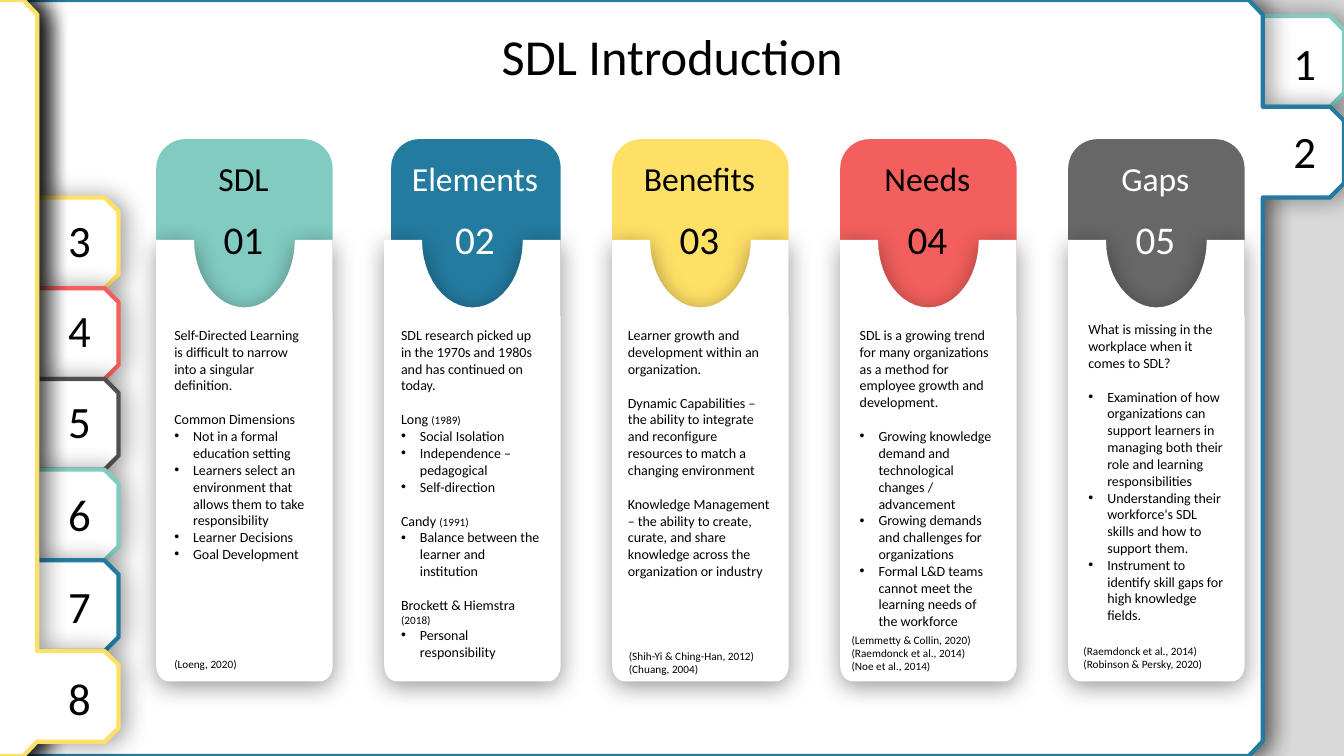
import math
from dataclasses import dataclass

import pptx
import pptx.dml.color
import pptx.enum.shapes
import pptx.enum.text
import pptx.oxml.ns
import pptx.shapes.base
import pptx.shapes.shapetree
import pptx.text.text
import pptx.util
from lxml import etree

Pt = pptx.util.Pt
RGBColor = pptx.dml.color.RGBColor
Shapes = pptx.shapes.shapetree.SlideShapes
qn = pptx.oxml.ns.qn

BLACK = RGBColor(0x00, 0x00, 0x00)
WHITE = RGBColor(0xFF, 0xFF, 0xFF)
BACKDROP = RGBColor(0xD9, 0xD9, 0xD9)
TEAL = RGBColor(0x81, 0xCB, 0xC1)
BLUE = RGBColor(0x24, 0x7B, 0xA0)
YELLOW = RGBColor(0xFF, 0xE0, 0x66)
RED = RGBColor(0xF2, 0x5F, 0x5C)
CHARCOAL = RGBColor(0x50, 0x51, 0x4F)
GREY = RGBColor(0x67, 0x67, 0x67)

FONT = "Calibri"
LEFT_SHIFT = -875.3
TAB_TOP, TAB_PITCH = 11.5, 64.8
COLUMN_LEFT, COLUMN_PITCH, COLUMN_WIDTH = 111.6, 162.85, 126
CARD_TOP, CARD_BOTTOM = 171.4, 486.7
BULLET_INDENT = 13.5
BLANK_LINE = 12.2

Point = tuple[float, float]


@dataclass(frozen=True)
class Box:
    left: float
    top: float
    width: float
    height: float


@dataclass(frozen=True)
class Tab:
    color: RGBColor
    label_top: float
    shift: float = LEFT_SHIFT


@dataclass(frozen=True)
class Line:
    text: str
    year: str = ""
    bullet: bool = False
    gap: bool = False
    size: float = 10


@dataclass(frozen=True)
class Column:
    title: str
    color: RGBColor
    text_color: RGBColor
    title_width: float
    body_box: Box
    body: list[Line]
    citation_box: Box | None = None
    citations: tuple[str, ...] = ()
    header_inset: float = 0


TABS = [
    Tab(TEAL, 21.6, 0), Tab(BLUE, 85, 0), Tab(YELLOW, 148.3), Tab(RED, 212.4),
    Tab(CHARCOAL, 277.9), Tab(TEAL, 344.2), Tab(BLUE, 409.7), Tab(YELLOW, 475.2),
]

COLUMNS = [
    Column("SDL", TEAL, BLACK, 121, Box(117.4, 229.7, 110.9, 177.1), [
        Line("Self-Directed Learning is difficult to narrow into a singular definition."),
        Line("Common Dimensions", gap=True),
        Line("Not in a formal education setting", bullet=True),
        Line("Learners select an environment that allows them to take responsibility", bullet=True),
        Line("Learner Decisions", bullet=True),
        Line("Goal Development", bullet=True),
    ], Box(117.4, 465.8, 110.9, 17.3), ("(Loeng, 2020)",)),
    Column("Elements", BLUE, WHITE, 109.4, Box(279.4, 229.7, 115.2, 234.7), [
        Line("SDL research picked up in the 1970s and 1980s and has continued on today."),
        Line("Long ", "(1989)", gap=True),
        Line("Social Isolation", bullet=True),
        Line("Independence – pedagogical", bullet=True),
        Line("Self-direction", bullet=True),
        Line("Candy ", "(1991)", gap=True),
        Line("Balance between the learner and institution", bullet=True),
        Line("Brockett & Hiemstra ", "(2018)", gap=True),
        Line("Personal responsibility", bullet=True),
    ], header_inset=5),
    Column("Benefits", YELLOW, BLACK, 114.5, Box(441.4, 229.7, 115.9, 189.4), [
        Line("Learner growth and development within an organization."),
        Line("Dynamic Capabilities – the ability to integrate and reconfigure resources "
             "to match a changing environment", gap=True),
        Line("Knowledge Management – the ability to create, curate, and share knowledge "
             "across the organization or industry", gap=True),
    ], Box(442.1, 460.1, 115.9, 26.6), ("(Shih-Yi & Ching-Han, 2012)", "(Chuang, 2004)")),
    Column("Needs", RED, BLACK, 100.8, Box(607, 229.7, 110.2, 225.4), [
        Line("SDL is a growing trend for many organizations as a method for employee "
             "growth and development."),
        Line("Growing knowledge demand and technological changes / advancement",
             bullet=True, gap=True),
        Line("Growing demands and challenges for organizations", bullet=True),
        Line("Formal L&D teams cannot meet the learning needs of the workforce", bullet=True),
    ], Box(601.2, 448.6, 115.9, 36),
        ("(Lemmetty & Collin, 2020) (Raemdonck et al., 2014)", "(Noe et al., 2014)")),
    Column("Gaps", GREY, WHITE, 100.8, Box(770.4, 225.4, 110.9, 225.4), [
        Line("What is missing in the workplace when it comes to SDL?"),
        Line("Examination of how organizations can support learners in managing both "
             "their role and learning responsibilities", bullet=True, gap=True),
        Line("Understanding their workforce's SDL skills and how to support them.", bullet=True),
        Line("Instrument to identify skill gaps for high knowledge fields.", bullet=True),
    ], Box(766.8, 456.5, 115.9, 26.6),
        ("(Raemdonck et al., 2014)", "(Robinson & Persky, 2020)")),
]


def add_shadow(shape: pptx.shapes.base.BaseShape, distance: float, degrees: int) -> None:
    shape.shadow.inherit = False
    effects = shape._element.spPr.find(qn("a:effectLst"))
    shadow = etree.SubElement(effects, qn("a:outerShdw"), {
        "blurRad": str(Pt(17)), "dist": str(Pt(distance)),
        "dir": str(degrees * 60000), "rotWithShape": "0"})
    black = etree.SubElement(shadow, qn("a:srgbClr"), val=str(BLACK))
    etree.SubElement(black, qn("a:alpha"), val="40000")


def add_outline(shapes: Shapes, points: list[Point], distance: float, degrees: int,
                edge: RGBColor | None = None) -> None:
    start, *rest = [(Pt(x), Pt(y)) for x, y in points]
    builder = shapes.build_freeform(*start)
    builder.add_line_segments(rest, close=True)
    outline = builder.convert_to_shape()
    outline.fill.solid()
    outline.fill.fore_color.rgb = WHITE
    if edge is None:
        outline.line.fill.background()
    else:
        outline.line.color.rgb = edge
        outline.line.width = Pt(3)
    add_shadow(outline, distance, degrees)


def add_run(paragraph: pptx.text.text._Paragraph, text: str, size: float, color: RGBColor) -> None:
    run = paragraph.add_run()
    run.text = text
    run.font.name = FONT
    run.font.size = Pt(size)
    run.font.color.rgb = color


def add_text(shapes: Shapes, box: Box, lines: list[Line], color: RGBColor = BLACK,
             centered: bool = False) -> None:
    frame = shapes.add_textbox(Pt(box.left), Pt(box.top), Pt(box.width), Pt(box.height)).text_frame
    frame.word_wrap = True
    frame.auto_size = pptx.enum.text.MSO_AUTO_SIZE.SHAPE_TO_FIT_TEXT
    for index, line in enumerate(lines):
        paragraph = frame.add_paragraph() if index else frame.paragraphs[0]
        if centered:
            paragraph.alignment = pptx.enum.text.PP_ALIGN.CENTER
        if line.gap:
            paragraph.space_before = Pt(BLANK_LINE)
        if line.bullet:
            properties = paragraph._p.get_or_add_pPr()
            properties.set("marL", str(Pt(BULLET_INDENT)))
            properties.set("indent", str(-Pt(BULLET_INDENT)))
            etree.SubElement(properties, qn("a:buFont"), typeface="Arial")
            etree.SubElement(properties, qn("a:buChar"), char="•")
        add_run(paragraph, line.text, line.size, color)
        if line.year:
            add_run(paragraph, line.year, 8, color)


def add_tab(shapes: Shapes, number: int, tab: Tab) -> None:
    top = TAB_TOP + TAB_PITCH * (number - 1)
    bottom = top + TAB_PITCH
    sheet = [(0, 0), (892, 0), (902, 10.5), (902, top), (950, top), (960, top + 10),
             (960, bottom - 10), (950, bottom), (902, bottom), (902, 529.5), (892, 540), (0, 540)]
    add_outline(shapes, [(x + tab.shift, y) for x, y in sheet], 3, 0, tab.color)
    add_text(shapes, Box(915.8 + tab.shift, tab.label_top, 32.4, 46),
             [Line(str(number), size=32)], centered=True)


def arc(center: Point, radii: Point, start: int, end: int) -> list[Point]:
    steps = 24
    angles = [math.radians(start + (end - start) * step / steps) for step in range(steps + 1)]
    return [(center[0] + radii[0] * math.cos(a), center[1] + radii[1] * math.sin(a)) for a in angles]


def add_column(shapes: Shapes, index: int, column: Column) -> None:
    left = COLUMN_LEFT + COLUMN_PITCH * index
    right = left + COLUMN_WIDTH
    inset = column.header_inset
    header = shapes.add_shape(pptx.enum.shapes.MSO_SHAPE.ROUND_2_SAME_RECTANGLE, Pt(left + inset),
                              Pt(99.4), Pt(COLUMN_WIDTH - inset), Pt(126))
    header.shadow.inherit = False
    header.fill.solid()
    header.fill.fore_color.rgb = column.color
    header.line.fill.background()
    middle = (left + inset + right) / 2 - 0.7
    for text, size, top, width, height in (
            (column.title, 24, 109.4, column.title_width, 36),
            (f"{index + 1:02d}", 28, 150.5, 50.4, 41)):
        add_text(shapes, Box(middle - width / 2, top, width, height),
                 [Line(text, size=size)], column.text_color, centered=True)
    notch = arc((left + COLUMN_WIDTH / 2, CARD_TOP), (36, 48.2), 180, 0)
    right_corner = arc((right - 9, CARD_BOTTOM - 11.5), (9, 11.5), 0, 90)
    left_corner = arc((left + 9, CARD_BOTTOM - 11.5), (9, 11.5), 90, 180)
    add_outline(shapes, [(left, CARD_TOP), *notch, (right, CARD_TOP), *right_corner, *left_corner],
                4, 90)
    add_text(shapes, column.body_box, column.body)
    if column.citation_box:
        add_text(shapes, column.citation_box, [Line(text, size=8) for text in column.citations])


def main() -> None:
    deck = pptx.Presentation()
    deck.slide_width, deck.slide_height = Pt(960), Pt(540)
    slide = deck.slides.add_slide(deck.slide_layouts[6])
    slide.background.fill.solid()
    slide.background.fill.fore_color.rgb = BACKDROP
    for number, tab in enumerate(TABS, 1):
        add_tab(slide.shapes, number, tab)
    add_text(slide.shapes, Box(152.6, 14.4, 655.2, 51), [Line("SDL Introduction", size=36)],
             centered=True)
    for index, column in enumerate(COLUMNS):
        add_column(slide.shapes, index, column)
    deck.save("out.pptx")


if __name__ == "__main__":
    main()
